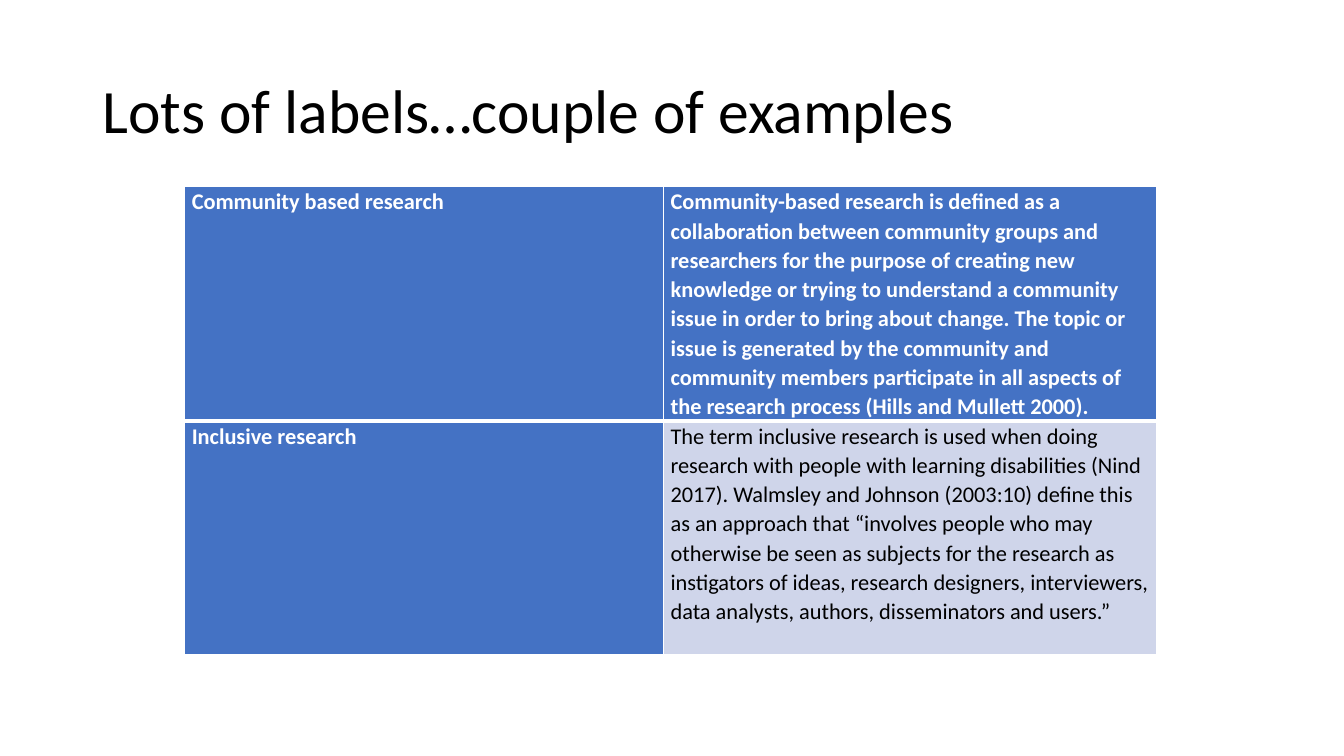
"""Build a slide that defines two research labels in a table."""
from lxml import etree
from pptx import Presentation
from pptx.dml.color import RGBColor
from pptx.enum import text
from pptx.oxml import ns
from pptx.util import Pt

BLACK = RGBColor(0x00, 0x00, 0x00)
WHITE = RGBColor(0xFF, 0xFF, 0xFF)
BLUE = RGBColor(0x44, 0x72, 0xC4)
PALE = RGBColor(0xCF, 0xD5, 0xEA)
FONT = "Calibri"

DEFINITIONS = [
    ("Community based research",
     "Community-based research is defined as a collaboration between community groups and "
     "researchers for the purpose of creating new knowledge or trying to understand a community "
     "issue in order to bring about change. The topic or issue is generated by the community and "
     "community members participate in all aspects of the research process "
     "(Hills and Mullett 2000)."),
    ("Inclusive research",
     "The term inclusive research is used when doing research with people with learning "
     "disabilities (Nind 2017). Walmsley and Johnson (2003:10) define this as an approach that "
     "“involves people who may otherwise be seen as subjects for the research as instigators of "
     "ideas, research designers, interviewers, data analysts, authors, disseminators and users.”"),
]


def style_paragraph(paragraph, size, color, bold, spacing):
    paragraph.alignment = text.PP_ALIGN.LEFT
    paragraph.line_spacing = spacing
    paragraph.font.name = FONT
    paragraph.font.size = Pt(size)
    paragraph.font.bold = bold
    paragraph.font.color.rgb = color


def add_borders(cell, widths):
    properties = cell._tc.get_or_add_tcPr()
    for position, (side, width) in enumerate(widths.items()):
        line = etree.Element(ns.qn(f"a:ln{side}"), w=str(Pt(width)))
        fill = etree.SubElement(line, ns.qn("a:solidFill"))
        etree.SubElement(fill, ns.qn("a:srgbClr"), val=str(WHITE))
        properties.insert(position, line)


deck = Presentation()
deck.slide_width, deck.slide_height = Pt(960), Pt(540)
slide = deck.slides.add_slide(deck.slide_layouts[5])

title = slide.shapes.title
title.left, title.top, title.width, title.height = Pt(66), Pt(28.75), Pt(828), Pt(104.4)
title.text_frame.text = "Lots of labels…couple of examples"
title.text_frame.vertical_anchor = text.MSO_ANCHOR.MIDDLE
title.text_frame.auto_size = text.MSO_AUTO_SIZE.NONE
style_paragraph(title.text_frame.paragraphs[0], 44, BLACK, False, 0.9)

definitions = slide.shapes.add_table(
    len(DEFINITIONS), 2, Pt(132), Pt(133.2), Pt(694), Pt(334)).table
for column, width in zip(definitions.columns, (342, 352)):
    column.width = Pt(width)

for row, entry in enumerate(DEFINITIONS):
    for column, wording in enumerate(entry):
        cell = definitions.cell(row, column)
        emphasized = row == 0 or column == 0
        cell.text = wording
        cell.margin_left = cell.margin_right = Pt(5)
        cell.margin_top = cell.margin_bottom = 0
        cell.fill.solid()
        cell.fill.fore_color.rgb = BLUE if emphasized else PALE
        style_paragraph(cell.text_frame.paragraphs[0], 16,
                        WHITE if emphasized else BLACK, emphasized, 1.07)
        add_borders(cell, {"L": 1, "R": 1, "T": 3 if row else 1, "B": 1 if row else 3})

deck.save("out.pptx")
